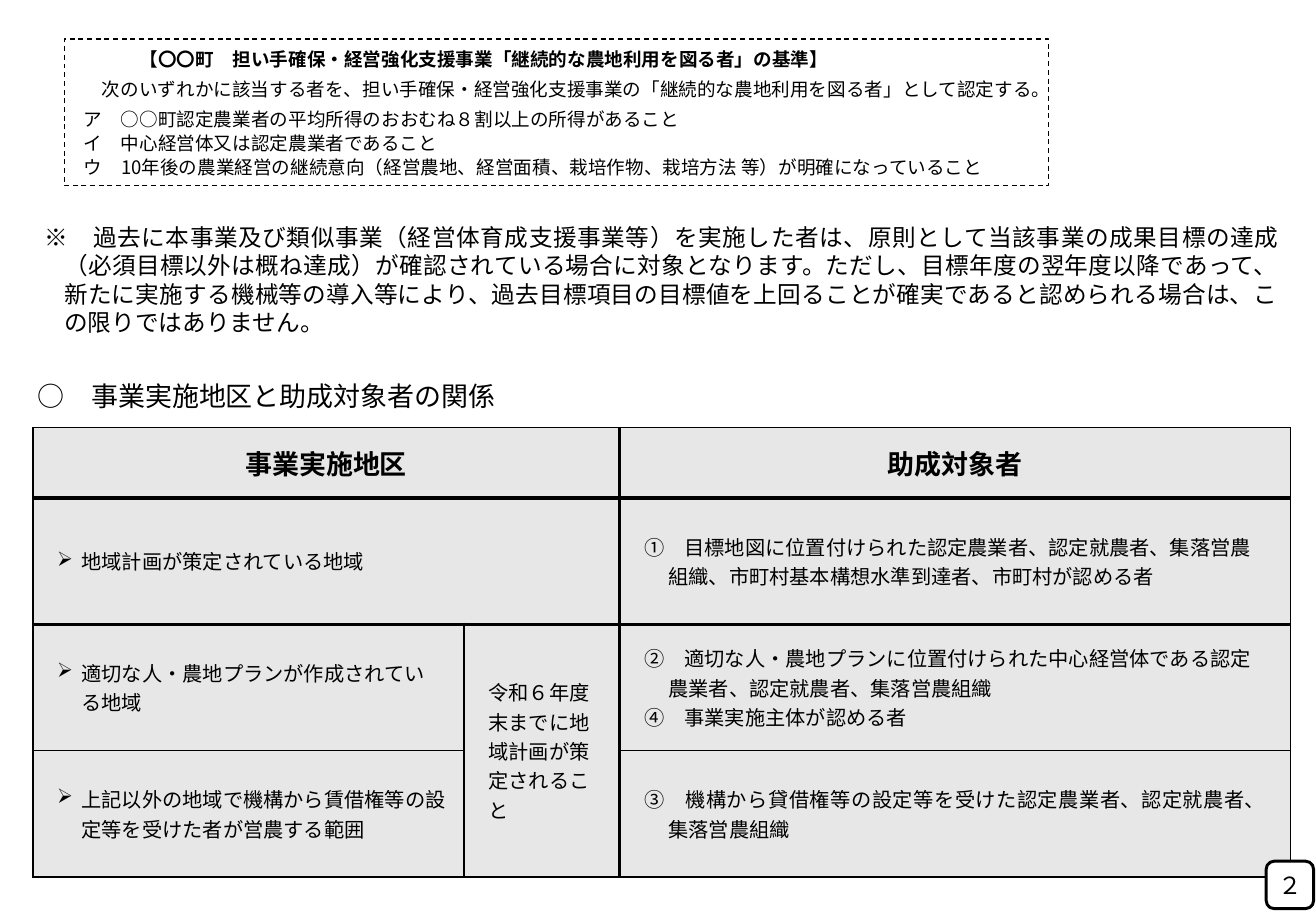
from lxml.etree import SubElement
from pptx import Presentation
from pptx.dml.color import RGBColor
from pptx.enum.dml import MSO_LINE
from pptx.enum.shapes import MSO_SHAPE
from pptx.enum.text import MSO_ANCHOR, MSO_AUTO_SIZE, PP_ALIGN
from pptx.oxml import parse_xml
from pptx.oxml.ns import nsdecls, qn
from pptx.util import Inches, Pt

BLACK = RGBColor(0x00, 0x00, 0x00)
WHITE = RGBColor(0xFF, 0xFF, 0xFF)
GREY = RGBColor(0xE7, 0xE7, 0xE7)

THIN, THICK = 1, 2.25
THICK_COLUMN_EDGES = {2}
THICK_ROW_EDGES = {1, 2}

CRITERIA = [  # text, bold, indent, space before
    ("【〇〇町　担い手確保・経営強化支援事業「継続的な農地利用を図る者」の基準】", True, 0.46, 0),
    ("次のいずれかに該当する者を、担い手確保・経営強化支援事業の「継続的な農地利用を図る者」として認定する。",
     False, 0.15, 4.8),
    ("ア　○○町認定農業者の平均所得のおおむね８割以上の所得があること", False, 0, 4.8),
    ("イ　中心経営体又は認定農業者であること", False, 0, 1.2),
    ("ウ　10年後の農業経営の継続意向（経営農地、経営面積、栽培作物、栽培方法 等）が明確になっていること",
     False, 0, 1.2),
]
NOTE = ("※　過去に本事業及び類似事業（経営体育成支援事業等）を実施した者は、原則として当該事業の成果目標の達成"
        "（必須目標以外は概ね達成）が確認されている場合に対象となります。ただし、目標年度の翌年度以降であって、"
        "新たに実施する機械等の導入等により、過去目標項目の目標値を上回ることが確実であると認められる場合は、"
        "この限りではありません。")
HEADERS = {0: "事業実施地区", 2: "助成対象者"}
AREAS = [
    "地域計画が策定されている地域",
    "適切な人・農地プランが作成されている地域",
    "上記以外の地域で機構から賃借権等の設定等を受けた者が営農する範囲",
]
CONDITION = "令和６年度末までに地域計画が策定されること"
RECIPIENTS = [
    ["①　目標地図に位置付けられた認定農業者、認定就農者、集落営農組織、市町村基本構想水準到達者、市町村が認める者"],
    ["②　適切な人・農地プランに位置付けられた中心経営体である認定農業者、認定就農者、集落営農組織",
     "④　事業実施主体が認める者"],
    ["③　機構から貸借権等の設定等を受けた認定農業者、認定就農者、集落営農組織"],
]


class SlideBuilder:
    """Holds the text style and the current slide."""

    font_name = "Noto Sans CJK JP"

    def __init__(self, slide):
        self.slide = slide

    def frame(self, frame, insets, anchor=MSO_ANCHOR.TOP):
        frame.word_wrap = True
        frame.auto_size = MSO_AUTO_SIZE.NONE
        frame.vertical_anchor = anchor
        (frame.margin_left, frame.margin_top,
         frame.margin_right, frame.margin_bottom) = map(Inches, insets)

    def paragraph(self, para, text, size, bold=False, align=PP_ALIGN.LEFT,
                  left=0, hanging=0, before=0, line=None, bullet=None):
        para.text = text
        para.alignment = align
        para.space_before = Pt(before)
        if line:
            para.line_spacing = Pt(line)
        properties = para._p.get_or_add_pPr()
        properties.set("marL", str(Inches(left)))
        properties.set("indent", str(-Inches(hanging)))
        if bullet:
            SubElement(properties, qn("a:buChar")).set("char", bullet)
        font = para.font
        font.name = self.font_name
        font.size = Pt(size)
        font.bold = bold
        font.color.rgb = BLACK
        SubElement(font._element, qn("a:ea")).set("typeface", self.font_name)

    def title(self, text, place):
        title = self.slide.shapes.title
        title.left, title.top, title.width, title.height = map(Inches, place)
        self.frame(title.text_frame, (0.1, 0.05, 0.1, 0.05))
        self.paragraph(title.text_frame.paragraphs[0], text, 16,
                       align=PP_ALIGN.JUSTIFY, line=19)

    def text_box(self, place):
        box = self.slide.shapes.add_textbox(*map(Inches, place))
        self.frame(box.text_frame, (0.1, 0.05, 0.1, 0.05))
        return box.text_frame

    def outlined_box(self, kind, place, width, insets, anchor, fill=None, dash=None):
        box = self.slide.shapes.add_shape(kind, *map(Inches, place))
        box.shadow.inherit = False
        if fill is None:
            box.fill.background()
        else:
            box.fill.solid()
            box.fill.fore_color.rgb = fill
        box.line.color.rgb = BLACK
        box.line.width = Pt(width)
        if dash:
            box.line.dash_style = dash
        self.frame(box.text_frame, insets, anchor)
        return box.text_frame

    def table(self, place, widths, heights, merges):
        table = self.slide.shapes.add_table(
            len(heights), len(widths), *map(Inches, place)).table
        table.first_row = table.horz_banding = False
        for column, width in zip(table.columns, widths):
            column.width = Inches(width)
        for row, height in zip(table.rows, heights):
            row.height = Inches(height)
        for first, last in merges:
            table.cell(*first).merge(table.cell(*last))
        for row in range(len(heights)):
            for column in range(len(widths)):
                cell = table.cell(row, column)
                cell.fill.solid()
                cell.fill.fore_color.rgb = GREY
                self.borders(cell, row, column)
        return table

    def borders(self, cell, row, column):
        right, bottom = column + 1, row + 1
        if cell.is_merge_origin:
            right, bottom = column + cell.span_width, row + cell.span_height
        edges = [("L", column, THICK_COLUMN_EDGES), ("R", right, THICK_COLUMN_EDGES),
                 ("T", row, THICK_ROW_EDGES), ("B", bottom, THICK_ROW_EDGES)]
        if cell.is_spanned:
            edges = edges[1::2]
        properties = cell._tc.get_or_add_tcPr()
        for position, (side, edge, thick_edges) in enumerate(edges):
            width = Pt(THICK if edge in thick_edges else THIN)
            properties.insert(position, parse_xml(
                f'<a:ln{side} {nsdecls("a")} w="{width}"><a:solidFill>'
                f'<a:srgbClr val="{BLACK}"/></a:solidFill></a:ln{side}>'))

    def cell_text(self, cell, texts, size=12, insets=(0.2, 0.12, 0.2, 0.12), **style):
        cell.vertical_anchor = MSO_ANCHOR.MIDDLE
        (cell.margin_left, cell.margin_top,
         cell.margin_right, cell.margin_bottom) = map(Inches, insets)
        frame = cell.text_frame
        for index, text in enumerate(texts):
            para = frame.add_paragraph() if index else frame.paragraphs[0]
            self.paragraph(para, text, size, **style)


def main():
    deck = Presentation()
    deck.slide_width, deck.slide_height = Inches(10.83), Inches(7.5)
    page = SlideBuilder(deck.slides.add_slide(deck.slide_layouts[5]))

    # Relationship table
    table = page.table((0.27, 3.52, 10.35, 3.7), (3.55, 1.28, 5.52),
                       (0.58, 1.04, 1.04, 1.04),
                       [((0, 0), (0, 1)), ((1, 0), (1, 1)), ((2, 1), (3, 1))])
    for column, header in HEADERS.items():
        page.cell_text(table.cell(0, column), [header], 16, bold=True, align=PP_ALIGN.CENTER)
    for row, (area, recipients) in enumerate(zip(AREAS, RECIPIENTS), start=1):
        last = row == len(AREAS)
        page.cell_text(table.cell(row, 0), [area], left=0.2, hanging=0.2, bullet="➢",
                       insets=(0.2, 0.05, 0.1, 0.05) if last else (0.2, 0.12, 0.2, 0.12))
        page.cell_text(table.cell(row, 2), recipients, left=0.2, hanging=0.2,
                       align=PP_ALIGN.JUSTIFY if last else PP_ALIGN.LEFT)
    page.cell_text(table.cell(2, 1), [CONDITION])

    # Criteria in the dashed box
    criteria = page.outlined_box(MSO_SHAPE.RECTANGLE, (0.53, 0.32, 8.1, 1.21), 0.75,
                                 (0.16, 0.08, 0.1, 0), MSO_ANCHOR.TOP, dash=MSO_LINE.DASH)
    for index, (text, bold, left, before) in enumerate(CRITERIA):
        para = criteria.add_paragraph() if index else criteria.paragraphs[0]
        page.paragraph(para, text, 11, bold=bold, left=left, before=before, line=13)

    # Heading and note
    page.title("○　事業実施地区と助成対象者の関係", (0.21, 3.08, 8.43, 0.37))
    note = page.text_box((0.27, 1.79, 10.35, 1.04))
    page.paragraph(note.paragraphs[0], NOTE, 14, align=PP_ALIGN.JUSTIFY,
                   left=0.16, hanging=0.16, line=16.7)

    # Page number
    number = page.outlined_box(MSO_SHAPE.ROUNDED_RECTANGLE, (10.42, 7.09, 0.39, 0.39), 1.75,
                               (0, 0, 0, 0), MSO_ANCHOR.MIDDLE, fill=WHITE)
    page.paragraph(number.paragraphs[0], "２", 14, align=PP_ALIGN.CENTER)

    deck.save("out.pptx")


if __name__ == "__main__":
    main()
